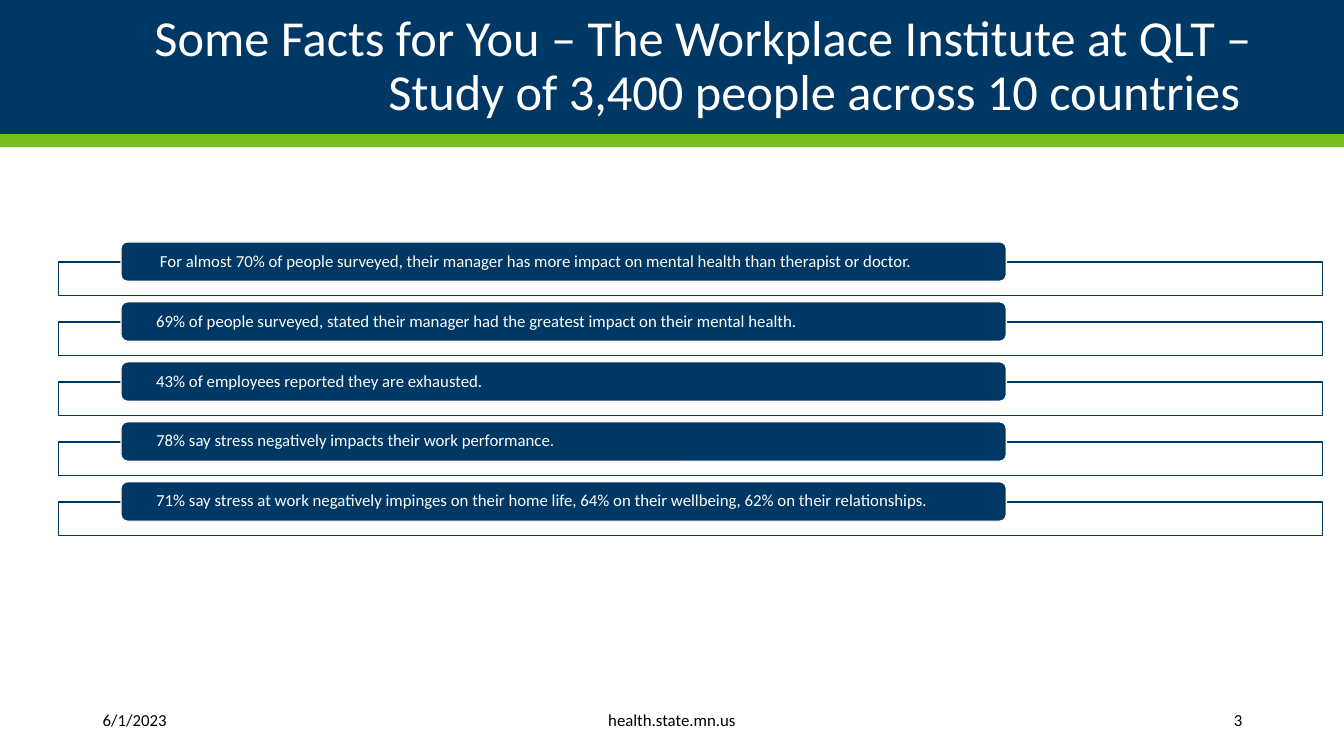
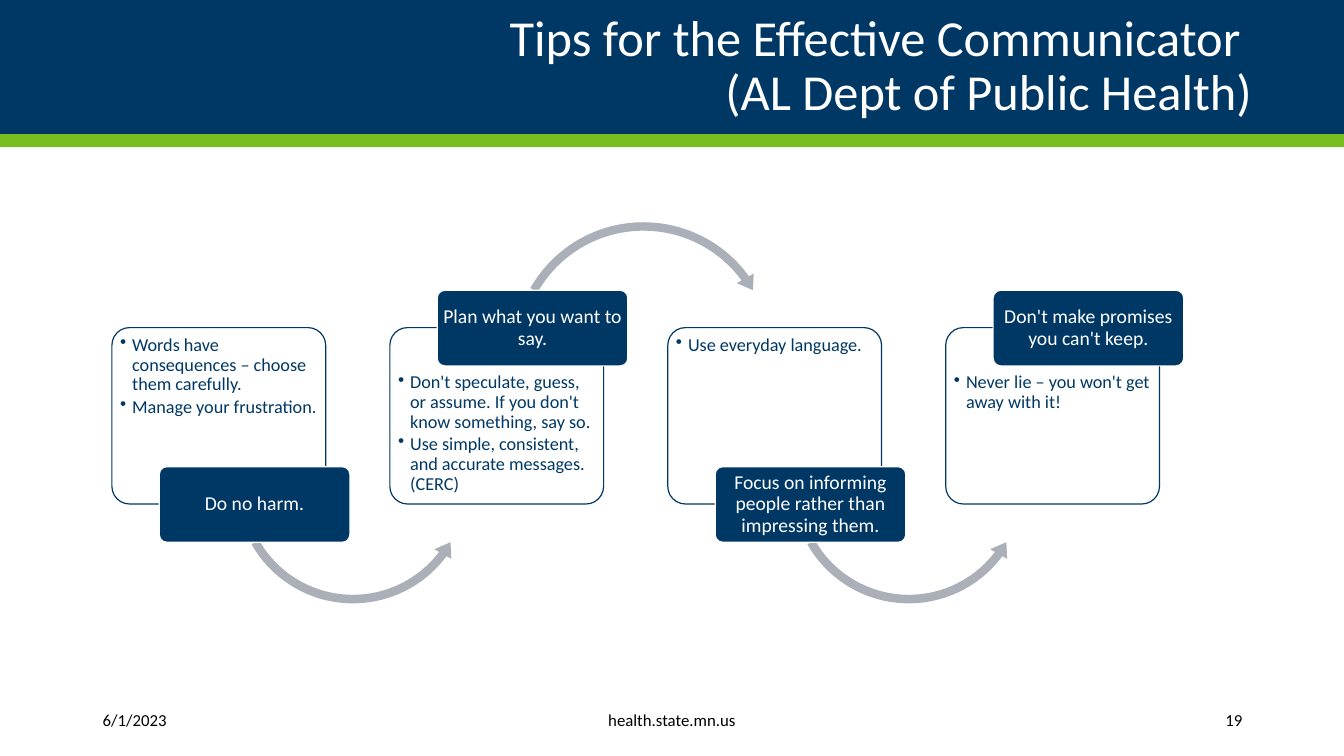
from lxml.etree import SubElement as Sub
from pptx import Presentation
from pptx.dml.color import RGBColor as RGB
from pptx.enum.shapes import MSO_SHAPE as Kind
from pptx.enum.text import MSO_ANCHOR as Anchor, MSO_AUTO_SIZE as Fit, PP_ALIGN as Align
from pptx.oxml.ns import qn
from pptx.util import Inches, Pt

NAVY = RGB(0x00, 0x38, 0x65)
GREEN = RGB(0x78, 0xBE, 0x21)
GRAY = RGB(0xAB, 0xAF, 0xB8)
WHITE = RGB(0xFF, 0xFF, 0xFF)
BLACK = RGB(0x00, 0x00, 0x00)

FACTS = [
    " For almost 70% of people surveyed, their manager has more impact on mental health than therapist or doctor.",
    "69% of people surveyed, stated their manager had the greatest impact on their mental health.",
    "43% of employees reported they are exhausted.",
    "78% say stress negatively impacts their work performance.",
    "71% say stress at work negatively impinges on their home life, 64% on their wellbeing, 62% on their relationships.",
]
TIPS = [
    ("Do no harm.", ["Words have consequences – choose them carefully.", "Manage your frustration."]),
    ("Plan what you want to say.", [
        "Don't speculate, guess, or assume. If you don't know something, say so.",
        "Use simple, consistent, and accurate messages. (CERC)",
    ]),
    ("Focus on informing people rather than impressing them.", ["Use everyday language."]),
    ("Don't make promises you can't keep.", ["Never lie – you won't get away with it!"]),
]


class Deck:
    """Holds the shared style and the current slide."""

    font = "Calibri"
    edge = Pt(0.85)

    def __init__(self):
        self.prs = Presentation()
        self.prs.slide_width, self.prs.slide_height = Inches(13.33), Inches(7.5)
        self.base = self.prs.slide_layouts[5]
        self.slide = None

    def page(self, lines, number):
        """Start a slide with its title, bands and footer."""
        first = self.slide is None
        self.slide = self.prs.slides.add_slide(self.base)
        if first:
            self.bands()
        title = self.slide.shapes.title
        title.left, title.top = Inches(0.92), Inches(0)
        title.width, title.height = Inches(11.5), Inches(1.33)
        self.label(title, lines, 36, WHITE, Align.RIGHT, (0, 0.05, 0, 0.05))
        self.foot("6/1/2023", 0.92, 1.49, Align.LEFT)
        self.foot("health.state.mn.us", 3.61, 6.11, Align.CENTER)
        self.foot(str(number), 10.82, 1.6, Align.RIGHT)

    def bands(self):
        """Place the header bands on the shared layout."""
        tree = self.base.shapes.element
        for spot, (top, high, fill) in enumerate([(0, 1.33, NAVY), (1.33, 0.13, GREEN)]):
            band = self.shape(Kind.RECTANGLE, (0, top, 13.33, high), fill)
            tree.insert(2 + spot, band.element)

    def foot(self, text, left, wide, align):
        """Add one footer field."""
        box = self.slide.shapes.add_textbox(Inches(left), Inches(6.95), Inches(wide), Inches(0.4))
        self.label(box, [text], 12, BLACK, align, (0.1, 0.05, 0.1, 0.05))

    def shape(self, kind, area, fill, line=None, alpha=None, adjust=()):
        """Add a preset shape."""
        item = self.slide.shapes.add_shape(kind, *map(Inches, area))
        item.shadow.inherit = False
        item.fill.solid()
        item.fill.fore_color.rgb = fill
        if alpha:
            tint = item.element.spPr.find(qn("a:solidFill"))[0]
            Sub(tint, qn("a:alpha"), val=str(alpha * 1000))
        if line is None:
            item.line.fill.background()
        else:
            item.line.color.rgb = line
            item.line.width = self.edge
        for spot, value in enumerate(adjust):
            item.adjustments[spot] = value
        return item

    def frame(self, item, pads, anchor):
        """Set up the text frame of an item."""
        frame = item.text_frame
        frame.word_wrap = True
        frame.auto_size = Fit.NONE
        frame.vertical_anchor = anchor
        frame.margin_left, frame.margin_top, frame.margin_right, frame.margin_bottom = map(Inches, pads)
        return frame

    def run(self, para, text, size, color):
        """Add a styled run."""
        run = para.add_run()
        run.text = text
        run.font.name, run.font.size = self.font, Pt(size)
        run.font.color.rgb = color

    def label(self, item, lines, size, color, align, pads):
        """Fill an item with one paragraph, anchored in the middle."""
        para = self.frame(item, pads, Anchor.MIDDLE).paragraphs[0]
        para.alignment, para.line_spacing = align, 0.9
        for spot, line in enumerate(lines):
            if spot:
                para.add_line_break()
            self.run(para, line, size, color)

    def bullets(self, item, points, pads):
        """Fill an item with a bulleted list."""
        frame = self.frame(item, pads, Anchor.TOP)
        for spot, point in enumerate(points):
            para = frame.add_paragraph() if spot else frame.paragraphs[0]
            para.alignment, para.line_spacing, para.space_after = Align.LEFT, 0.9, Pt(2)
            props = para._p.get_or_add_pPr()
            props.set("marL", str(Inches(0.12)))
            props.set("indent", str(-Inches(0.12)))
            Sub(props, qn("a:buChar"), char="•")
            self.run(para, point, 13, NAVY)

    def fact(self, top, text):
        """Add a fact pill over its outlined bar."""
        self.shape(Kind.RECTANGLE, (0.58, top + 0.2, 12.54, 0.33), WHITE, NAVY, 90)
        pill = self.shape(Kind.ROUNDED_RECTANGLE, (1.2, top, 8.78, 0.39), NAVY, WHITE)
        self.label(pill, [text], 12, WHITE, Align.LEFT, (0.33, 0, 0.33, 0))

    def tip(self, left, head, points, high, arrow):
        """Add a tip card with its label and the arrow to the next."""
        card = self.shape(Kind.ROUNDED_RECTANGLE, (left, 3.25, 2.12, 1.75), WHITE, NAVY, 90, [0.1])
        self.bullets(card, points, (0.03, 0.4 if high else 0.03, 0.03, 0.03))
        if arrow and high:
            self.shape(Kind.CIRCULAR_ARROW, (left + 1.17, 2.15, 2.69, 2.69), GRAY,
                       adjust=(0.031, 3.837, 194.408, 125.755, 0.036))
        elif arrow:
            self.shape(Kind.LEFT_CIRCULAR_ARROW, (left + 1.18, 3.62, 2.42, 2.42), GRAY,
                       adjust=(0.035, 4.303, 22.058, 90.245, 0.04))
        area = (left + 0.47, 2.88 if high else 4.63, 1.89, 0.75)
        tag = self.shape(Kind.ROUNDED_RECTANGLE, area, NAVY, WHITE, adjust=[0.1])
        self.label(tag, [head], 14, WHITE, Align.CENTER, (0.03, 0.02, 0.03, 0.02))


def main():
    deck = Deck()
    deck.page(["Some Facts for You – The Workplace Institute at QLT – Study of 3,400 people across 10 countries "], 3)
    for row, text in enumerate(FACTS):
        deck.fact(2.4 + row * 2.38 / 4, text)

    deck.page(["Tips for the Effective Communicator ", "(AL Dept of Public Health)"], 19)
    for col, (head, points) in enumerate(TIPS):
        deck.tip(1.11 + col * 8.27 / 3, head, points, col % 2 == 1, col < len(TIPS) - 1)
    deck.prs.save("out.pptx")


if __name__ == "__main__":
    main()
